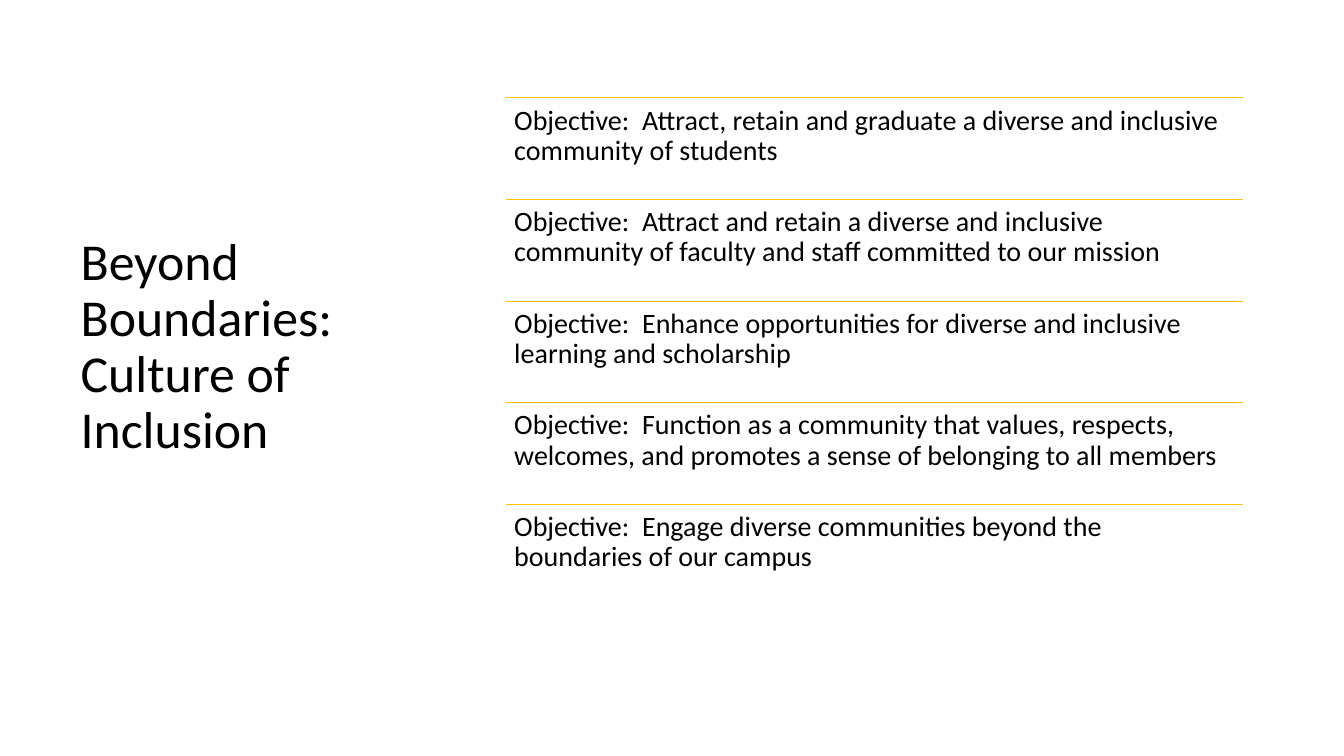
"""Build the Culture of Inclusion slide: a title beside five ruled objectives."""
from dataclasses import dataclass

import lxml.etree
import pptx
import pptx.dml.color
import pptx.enum.shapes
import pptx.enum.text
import pptx.oxml.ns
import pptx.shapes.shapetree
import pptx.text.text
import pptx.util

COLORS = {"text": "000000", "rule": "FFC000"}
FONT = "Calibri"
LIST_LEFT, LIST_TOP = 5.02, 0.97
LIST_WIDTH, LIST_HEIGHT = 7.31, 5.04
INSET = 0.08


@dataclass(frozen=True)
class Objective:
    """One objective and the top of its row in inches."""

    aim: str
    top: float


AIMS = (
    "Attract, retain and graduate a diverse and inclusive community of students",
    "Attract and retain a diverse and inclusive community of faculty and staff committed to our mission",
    "Enhance opportunities for diverse and inclusive learning and scholarship",
    "Function as a community that values, respects, welcomes, and promotes a sense of belonging to all members",
    "Engage diverse communities beyond the boundaries of our campus",
)
ROW_HEIGHT = LIST_HEIGHT / len(AIMS)
OBJECTIVES = [Objective(aim, LIST_TOP + row * ROW_HEIGHT) for row, aim in enumerate(AIMS)]


def write(frame: pptx.text.text.TextFrame, wording: str, size: float) -> None:
    """Put one left-aligned run into the frame."""
    frame.word_wrap = True
    frame.auto_size = pptx.enum.text.MSO_AUTO_SIZE.NONE
    paragraph = frame.paragraphs[0]
    paragraph.alignment = pptx.enum.text.PP_ALIGN.LEFT
    paragraph.line_spacing = 0.9
    run = paragraph.add_run()
    run.text = wording
    run.font.name = FONT
    run.font.size = pptx.util.Pt(size)
    run.font.color.rgb = pptx.dml.color.RGBColor.from_string(COLORS["text"])


def draw_objective(shapes: pptx.shapes.shapetree.GroupShapes, objective: Objective) -> None:
    """Draw the rule above an objective and its wording below."""
    left, top = pptx.util.Inches(LIST_LEFT), pptx.util.Inches(objective.top)
    width = pptx.util.Inches(LIST_WIDTH)
    rule = shapes.add_connector(
        pptx.enum.shapes.MSO_CONNECTOR.STRAIGHT, left, top, left + width, top
    )
    rule.line.color.rgb = pptx.dml.color.RGBColor.from_string(COLORS["rule"])
    rule.line.width = pptx.util.Pt(0.5)
    lxml.etree.SubElement(rule._element.spPr, pptx.oxml.ns.qn("a:effectLst"))

    statement = shapes.add_textbox(left, top, width, pptx.util.Inches(ROW_HEIGHT)).text_frame
    statement.margin_left = statement.margin_right = pptx.util.Inches(INSET)
    statement.margin_top = statement.margin_bottom = pptx.util.Inches(INSET)
    statement.vertical_anchor = pptx.enum.text.MSO_ANCHOR.TOP
    write(statement, f"Objective:  {objective.aim}", 20)


def main() -> None:
    """Build and save the slide."""
    deck = pptx.Presentation()
    deck.slide_width = pptx.util.Inches(13.33)
    deck.slide_height = pptx.util.Inches(7.5)
    slide = deck.slides.add_slide(deck.slide_layouts.get_by_name("Title Only"))

    heading = slide.shapes.title
    heading.left, heading.top = pptx.util.Inches(0.7), pptx.util.Inches(1.44)
    heading.width, heading.height = pptx.util.Inches(3.11), pptx.util.Inches(4.02)
    heading.text_frame.vertical_anchor = pptx.enum.text.MSO_ANCHOR.MIDDLE
    write(heading.text_frame, "Beyond Boundaries: Culture of Inclusion", 37)

    objective_list = slide.shapes.add_group_shape()
    for objective in OBJECTIVES:
        draw_objective(objective_list.shapes, objective)

    deck.save("out.pptx")


if __name__ == "__main__":
    main()
